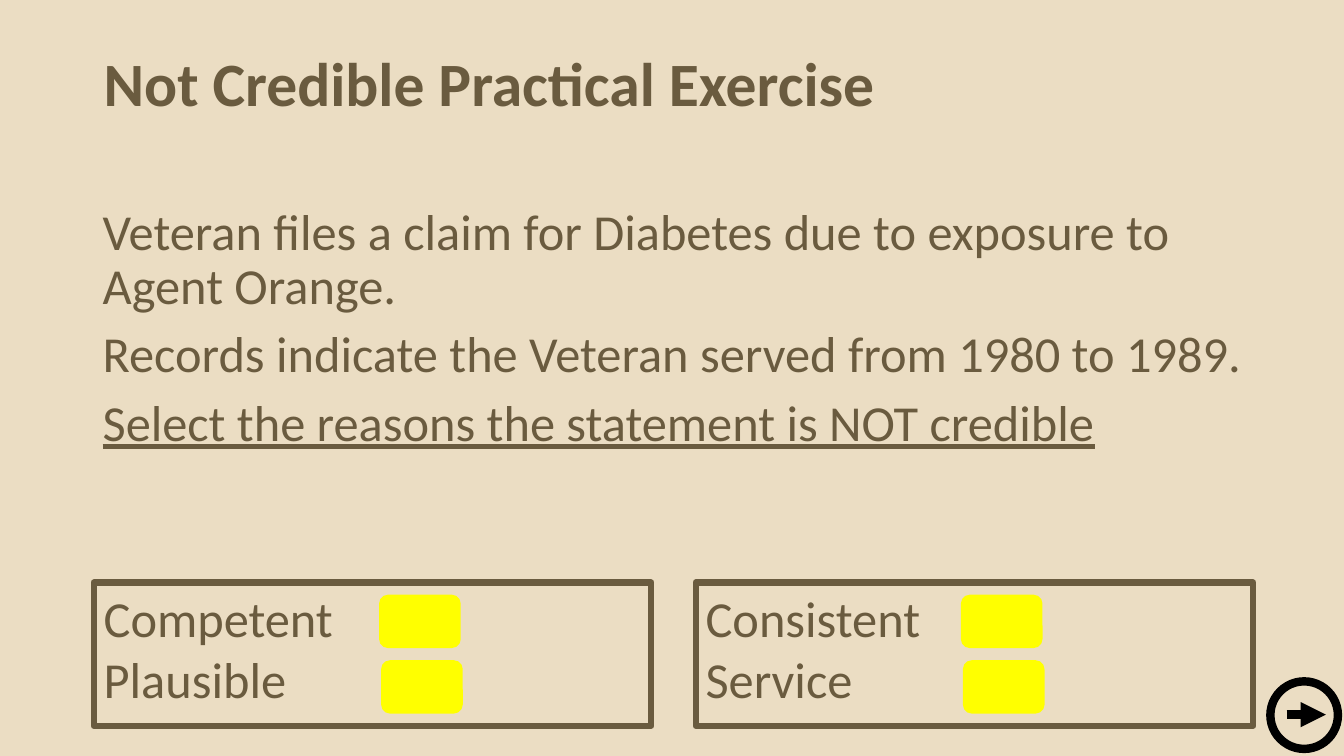
import pptx
import pptx.util
import pptx.dml.color
import pptx.enum.shapes
import pptx.enum.text
from lxml import etree

# Content
TITLE = "Not Credible Practical Exercise"
STATEMENTS = [
    ("Veteran files a claim for Diabetes due to exposure to Agent Orange.", False),
    ("Records indicate the Veteran served from 1980 to 1989.", False),
    ("Select the reasons the statement is NOT credible", True),
]
REASON_BOXES = [("Competent", "Plausible"), ("Consistent", "Service")]

THEME = {
    "font": "Calibri", "paper": "EBDDC3", "ink": "6A5B3F",
    "marker": "FFFF00", "arrow": "000000",
    "title": 44, "body": 36, "frame": 4.5, "stroke": 6,
}

# Layout grid, in inches
WIDTH, HEIGHT = 13.33, 7.5
LEFT, CONTENT_WIDTH = 0.93, 11.5
BOX_TOP, BOX_WIDTH, BOX_HEIGHT = 5.78, 5.53, 1.42
BOX_STEP = CONTENT_WIDTH - BOX_WIDTH
MARKER_LEFT, MARKER_STEP = 3.76, 5.77
MARKER_TOP, ROW_STEP, ROW_SHIFT = 5.9, 0.65, 0.02
MARKER_SIZE = (0.81, 0.53)
BUTTON = (12.6, 6.76, 0.67, 0.67)
ARROW = (12.76, 7.09, 13.15, 7.09)

SHAPES = pptx.enum.shapes.MSO_SHAPE
ANCHOR = pptx.enum.text.MSO_ANCHOR


def inches(*lengths):
    return [pptx.util.Inches(length) for length in lengths]


def color(name):
    return pptx.dml.color.RGBColor.from_string(THEME[name])


def write(box, text, size="body", bold=False, underline=False,
          line_spacing=1.0, before=0, first=False):
    """Add one left-aligned paragraph to a shape."""
    frame = box.text_frame
    para = frame.paragraphs[0] if first else frame.add_paragraph()
    para.alignment = pptx.enum.text.PP_ALIGN.LEFT
    para.line_spacing = line_spacing
    para.space_before = pptx.util.Pt(before)
    span = para.add_run()
    span.text = text
    span.font.name = THEME["font"]
    span.font.size = pptx.util.Pt(THEME[size])
    span.font.color.rgb = color("ink")
    span.font.bold = bold
    span.font.underline = underline


def add_text_box(page, area, anchor):
    box = page.shapes.add_textbox(*inches(*area))
    box.text_frame.word_wrap = True
    box.text_frame.vertical_anchor = anchor
    return box


def add_shape(page, kind, area, fill=None, line=None, weight=0):
    shape = page.shapes.add_shape(kind, *inches(*area))
    shape.shadow.inherit = False
    if fill:
        shape.fill.solid()
        shape.fill.fore_color.rgb = color(fill)
    else:
        shape.fill.background()
    if line:
        shape.line.color.rgb = color(line)
        shape.line.width = pptx.util.Pt(THEME[weight])
    else:
        shape.line.fill.background()
    return shape


def add_arrow(page):
    arrow = page.shapes.add_connector(
        pptx.enum.shapes.MSO_CONNECTOR.STRAIGHT, *inches(*ARROW))
    arrow.line.color.rgb = color("arrow")
    arrow.line.width = pptx.util.Pt(THEME["stroke"])
    name = pptx.oxml.ns.qn
    etree.SubElement(arrow.line._get_or_add_ln(), name("a:tailEnd"), type="triangle")
    etree.SubElement(arrow._element.spPr, name("a:effectLst"))


def main():
    deck = pptx.Presentation()
    deck.slide_width, deck.slide_height = inches(WIDTH, HEIGHT)
    page = deck.slides.add_slide(deck.slide_layouts[6])
    page.background.fill.solid()
    page.background.fill.fore_color.rgb = color("paper")

    # Title and statements
    title = add_text_box(page, (LEFT, 0.13, CONTENT_WIDTH, 1.45), ANCHOR.MIDDLE)
    write(title, TITLE, size="title", bold=True, line_spacing=0.9, first=True)
    body = add_text_box(page, (LEFT - 0.01, 2, CONTENT_WIDTH, 3.37), ANCHOR.TOP)
    for index, (text, underline) in enumerate(STATEMENTS):
        write(body, text, underline=underline, line_spacing=0.9, before=10,
              first=index == 0)

    # Reason boxes, each row with its marker
    for column, reasons in enumerate(REASON_BOXES):
        area = (LEFT + column * BOX_STEP, BOX_TOP, BOX_WIDTH, BOX_HEIGHT)
        box = add_shape(page, SHAPES.RECTANGLE, area, line="ink", weight="frame")
        box.text_frame.vertical_anchor = ANCHOR.TOP
        for row, reason in enumerate(reasons):
            write(box, reason, first=row == 0)
            left = MARKER_LEFT + column * MARKER_STEP + row * ROW_SHIFT
            top = MARKER_TOP + row * ROW_STEP
            add_shape(page, SHAPES.ROUNDED_RECTANGLE, (left, top, *MARKER_SIZE),
                      fill="marker")

    # Next button
    add_shape(page, SHAPES.OVAL, BUTTON, line="arrow", weight="stroke")
    add_arrow(page)

    deck.save("out.pptx")


if __name__ == "__main__":
    main()
